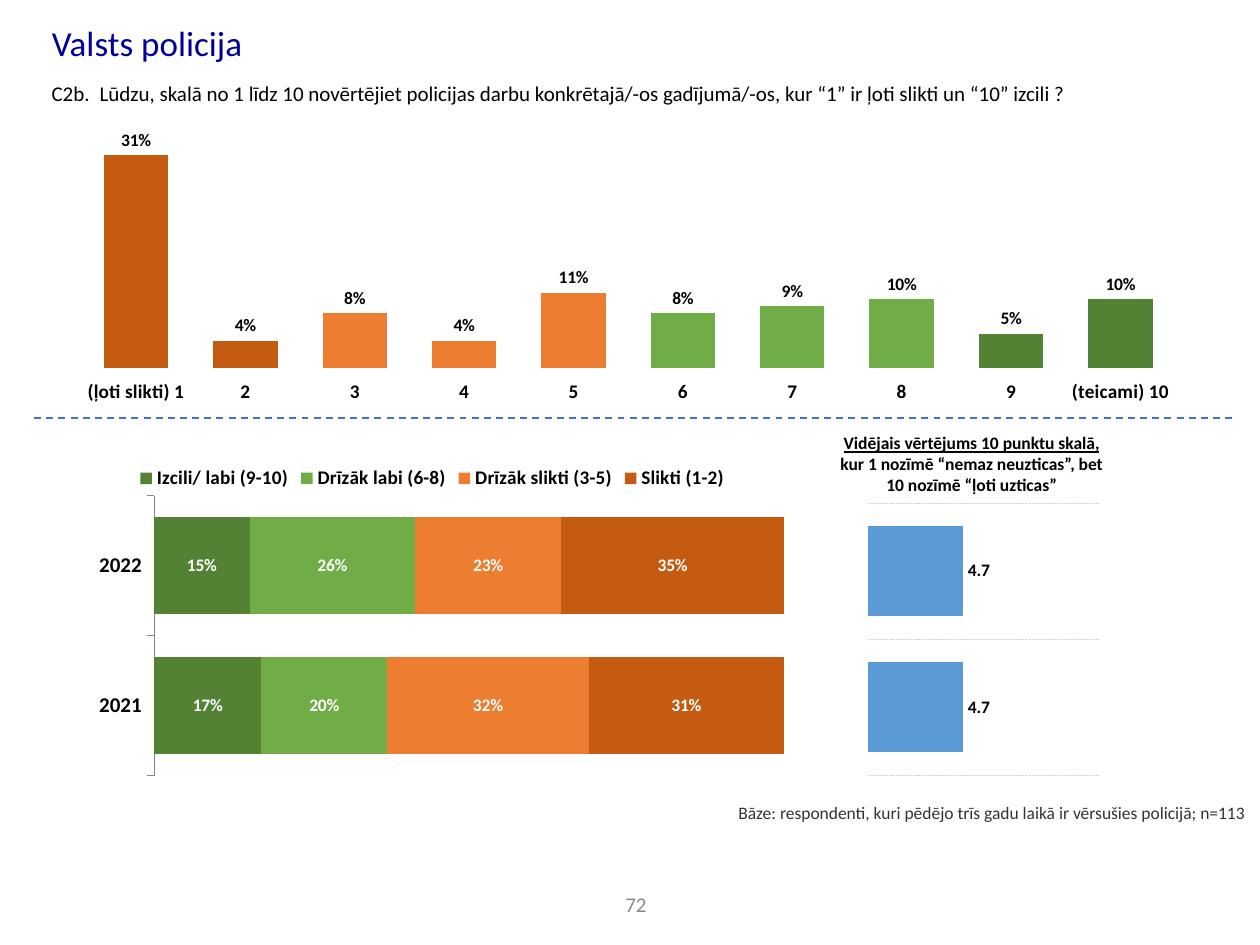
from lxml.etree import SubElement as Sub
from pptx import Presentation
from pptx.chart.data import CategoryChartData as Data
from pptx.dml.color import RGBColor as Rgb
from pptx.enum.chart import XL_CHART_TYPE as Kind, XL_LABEL_POSITION as Spot
from pptx.enum.chart import XL_LEGEND_POSITION as Side, XL_TICK_MARK as Tick
from pptx.enum.dml import MSO_LINE as Dash
from pptx.enum.shapes import MSO_CONNECTOR as Join
from pptx.enum.text import MSO_ANCHOR as Anchor, MSO_AUTO_SIZE as Fit, PP_ALIGN as Align
from pptx.oxml.ns import qn
from pptx.util import Cm, Pt

HUES = {
    "title": "000099", "text": "000000", "note": "333333", "page": "8C8C8C",
    "bad": "C55A11", "poor": "ED7D31", "good": "70AD47", "best": "548235",
    "mean": "5B9BD5", "rule": "4472C4", "grid": "D9D9D9", "axis": "868686",
    "white": "FFFFFF",
}


def hue(name):
    return Rgb.from_string(HUES[name])


def put(item, vals):
    for key, val in vals.items():
        setattr(item, key, val)


def style(font, size, color="text", **more):
    put(font, {"name": "Calibri", "size": Pt(size), **more})
    font.color.rgb = hue(color)


def fill(item, color):
    item.format.fill.solid()
    item.format.fill.fore_color.rgb = hue(color)


def write(shape, runs, size, color, frame=None, para=None):
    text = shape.text_frame
    put(text, {"word_wrap": True, "auto_size": Fit.NONE, **(frame or {})})
    line = text.paragraphs[0]
    put(line, {"alignment": Align.LEFT, **(para or {})})
    for words, more in runs:
        run = line.add_run()
        run.text = words
        style(run.font, size, color, **more)
    return line


def add_text(slide, box, *args, **more):
    return write(slide.shapes.add_textbox(*map(Cm, box)), *args, **more)


def lay_out(chart, spots):
    area = chart._chartSpace.chart.plotArea
    for old in area.findall(qn("c:layout")):
        area.remove(old)
    lay = Sub(area, qn("c:layout"))
    area.insert(0, lay)
    inner = Sub(lay, qn("c:manualLayout"))
    vals = {"layoutTarget": "inner", "xMode": "edge", "yMode": "edge",
            **dict(zip("xywh", spots))}
    for key, val in vals.items():
        Sub(inner, qn("c:" + key)).set("val", str(val))


def add_chart(slide, kind, box, cats, rows, form, gap, spots, color, scale):
    data = Data(number_format=form)
    data.categories = cats
    for name, vals, _ in rows:
        data.add_series(name, vals)
    chart = slide.shapes.add_chart(kind, *map(Cm, box), data).chart
    put(chart, {"has_title": False, "has_legend": False})
    style(chart.font, 10)
    put(chart.value_axis, {"visible": False, "has_major_gridlines": False, **scale})
    plot = chart.plots[0]
    put(plot, {"gap_width": gap, "vary_by_categories": False, "has_data_labels": True})
    put(plot.data_labels, {"show_value": True, "number_format": form,
                           "number_format_is_linked": False})
    style(plot.data_labels.font, 10, color, bold=True)
    for row, (_, _, shade) in zip(plot.series, rows):
        fill(row, shade)
        row.invert_if_negative = False
    lay_out(chart, spots)
    return chart


def add_scores(slide):
    cats = ["(ļoti slikti) 1", *map(str, range(2, 10)), "(teicami) 10"]
    vals = [0.31, 0.04, 0.08, 0.04, 0.11, 0.08, 0.09, 0.1, 0.05, 0.1]
    chart = add_chart(
        slide, Kind.COLUMN_CLUSTERED, (1.14, 1.75, 22.71, 6.73), cats,
        [("Series 1", vals, "bad")], "0%", 70, (0.022, 0.021, 0.971, 0.822), "text",
        {"minimum_scale": 0, "maximum_scale": 0.4, "major_unit": 0.1})
    plot = chart.plots[0]
    plot.data_labels.position = Spot.OUTSIDE_END
    shades = ["bad"] * 2 + ["poor"] * 3 + ["good"] * 3 + ["best"] * 2
    for num, shade in enumerate(shades):
        fill(plot.series[0].points[num], shade)
    axis = chart.category_axis
    axis.format.line.fill.background()
    style(axis.tick_labels.font, 11, bold=True)


def add_years(slide):
    rows = [
        ("Izcili/ labi (9-10)", (0.17, 0.15), "best"),
        ("Drīzāk labi (6-8)", (0.20, 0.26), "good"),
        ("Drīzāk slikti (3-5)", (0.32, 0.23), "poor"),
        ("Slikti (1-2)", (0.31, 0.35), "bad"),
    ]
    chart = add_chart(
        slide, Kind.BAR_STACKED_100, (0.84, 9.12, 15.75, 6.53), ["2021", "2022"],
        rows, "0%", 44, (0.144, 0.134, 0.806, 0.866), "white", {})
    chart.plots[0].overlap = 100
    axis = chart.category_axis
    axis.major_tick_mark = Tick.OUTSIDE
    axis.format.line.color.rgb = hue("axis")
    style(axis.tick_labels.font, 12, bold=True)
    chart.has_legend = True
    put(chart.legend, {"position": Side.TOP, "include_in_layout": False})
    style(chart.legend.font, 11, bold=True)


def add_means(slide):
    chart = add_chart(
        slide, Kind.BAR_CLUSTERED, (17.25, 10.13, 5.03, 5.51), ["1", "2"],
        [("Series 1", (4.7, 4.7), "mean")], "0.0", 50, (0.05, 0, 0.924, 0.998), "text",
        {"minimum_scale": 1, "maximum_scale": 10, "major_unit": 50})
    chart.plots[0].data_labels.position = Spot.OUTSIDE_END
    axis = chart.category_axis
    put(axis, {"visible": False, "has_major_gridlines": True})
    line = axis.major_gridlines.format.line
    put(line, {"width": Pt(0.5), "dash_style": Dash.SQUARE_DOT})
    line.color.rgb = hue("grid")


def add_rule(slide):
    rule = slide.shapes.add_connector(
        Join.STRAIGHT, Cm(0.69), Cm(8.43), Cm(24.89), Cm(8.43))
    rule.line.color.rgb = hue("rule")
    put(rule.line, {"width": Pt(1), "dash_style": Dash.DASH})
    Sub(rule._element.spPr, qn("a:effectLst"))


def main():
    deck = Presentation()
    put(deck, {"slide_width": Cm(25.4), "slide_height": Cm(19.05)})
    slide = deck.slides.add_slide(deck.slide_layouts[5])
    mid = {"vertical_anchor": Anchor.MIDDLE}
    center = {"alignment": Align.CENTER}

    title = slide.shapes.title
    put(title, dict(zip(("left", "top", "width", "height"),
                        map(Cm, (0.79, 0.23, 23.8, 1.24)))))
    write(title, [("Valsts policija", {})], 20, "title", frame=mid)

    ask = add_text(
        slide, (0.79, 1.5, 22.91, 0.97),
        [("C2b. \tLūdzu, skalā no 1 līdz 10 novērtējiet policijas darbu konkrētajā/-os "
          "gadījumā/-os, kur “1” ir ļoti slikti un “10” izcili ?", {})], 12, "text")
    indent = Cm(0.97)
    props = ask._p.get_or_add_pPr()
    props.set("marL", str(indent))
    props.set("indent", str(-indent))

    add_scores(slide)
    add_years(slide)
    add_means(slide)
    add_text(
        slide, (16.69, 8.59, 5.79, 1.55),
        [("Vidējais vērtējums 10 punktu skalā, ", {"bold": True, "underline": True}),
         ("kur 1 nozīmē “nemaz neuzticas”, bet 10 nozīmē “ļoti uzticas”", {"bold": True})],
        10, "text", para=center)
    bare = dict.fromkeys(
        ("margin_left", "margin_right", "margin_top", "margin_bottom"), 0)
    add_text(
        slide, (14.45, 16.03, 10.64, 0.69),
        [("Bāze: respondenti, kuri pēdējo trīs gadu laikā ir vērsušies policijā; n=113", {})],
        10, "note", frame={**mid, **bare}, para={"alignment": Align.RIGHT})
    add_rule(slide)
    add_text(slide, (12.12, 17.88, 1.4, 0.71), [("72", {})], 12, "page",
             frame=mid, para=center)
    deck.save("out.pptx")


if __name__ == "__main__":
    main()
